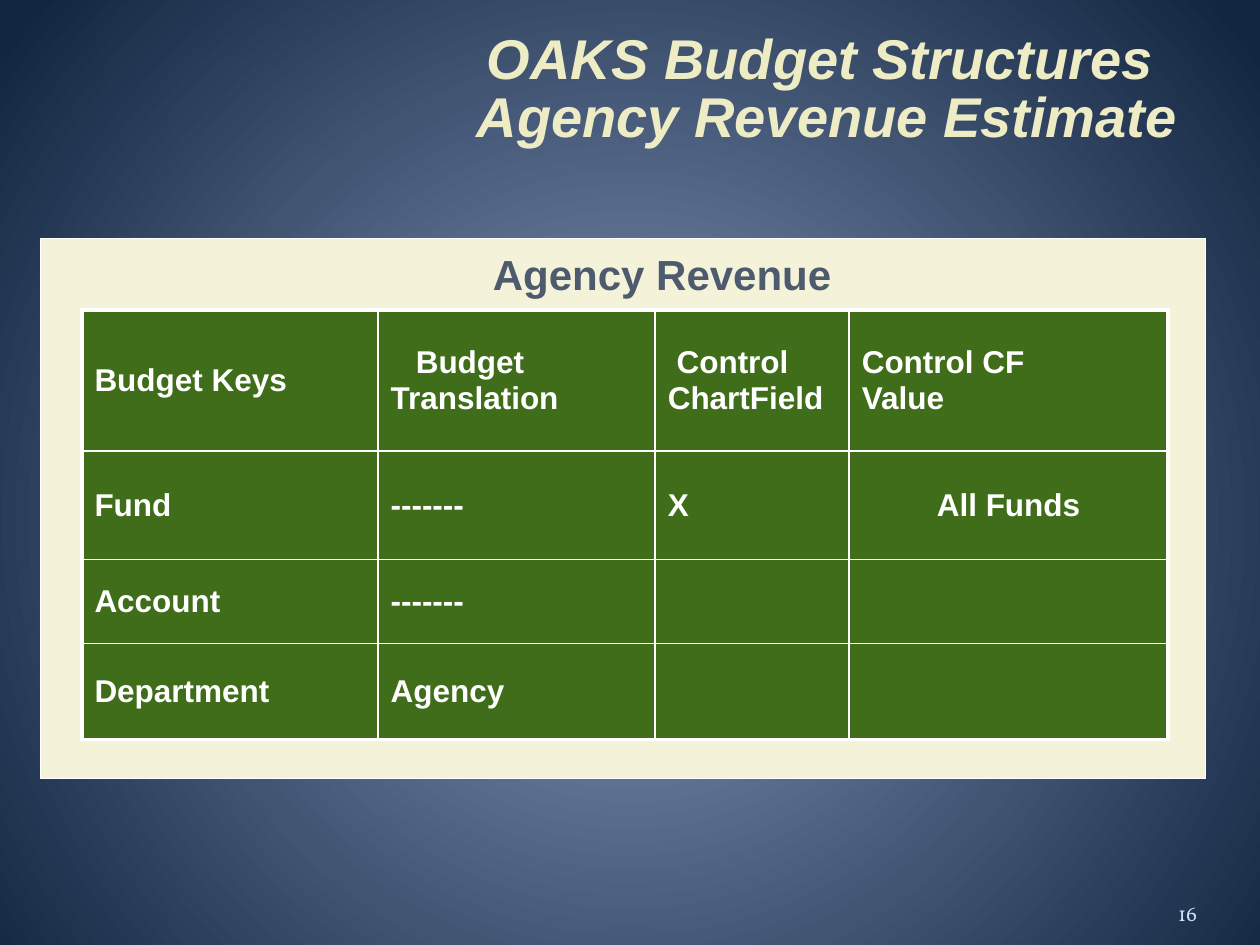
from lxml import etree
from pptx import Presentation
from pptx.dml.color import RGBColor
from pptx.enum import shapes, text
from pptx.oxml import parse_xml
from pptx.oxml.ns import nsdecls, qn
from pptx.util import Inches, Pt

WHITE, GREEN, CREAM = "FFFFFF", "3F6D19", "F4F3D9"
SLATE, TITLE, PALE_BLUE = "4E5B6F", "EEECC4", "CCE1F4"
LEFT, CENTER, RIGHT = (text.PP_ALIGN.LEFT, text.PP_ALIGN.CENTER,
                       text.PP_ALIGN.RIGHT)
MIDDLE, BOTTOM = text.MSO_ANCHOR.MIDDLE, text.MSO_ANCHOR.BOTTOM

BACKGROUND_STOPS = [(0, "51DAFF"), (7, "7B85B3"), (14, "7386A7"), (100, "122541")]
COLUMN_WIDTHS = [2.35, 2.2, 1.54, 2.53]
ROW_HEIGHTS = [1.12, 0.86, 0.67, 0.76]
ROWS = [
    ["Budget Keys", "Budget Translation", "Control ChartField", "Control CF\vValue"],
    ["Fund", "-------", "X", "All Funds"],
    ["Account", "-------", "", ""],
    ["Department", "Agency", "", ""],
]
FIRST_LINE_INDENTS = {"Budget Translation": 0.2, "Control ChartField": 0.07}


def color(hex_value):
    return RGBColor.from_string(hex_value)


def write(frame, words, size=18, font="Arial", fill=WHITE, bold=True,
          italic=False, align=LEFT, margin=0, indent=0):
    paragraph = frame.paragraphs[0]
    paragraph.text = words
    paragraph.alignment = align
    if margin or indent:
        properties = paragraph._p.get_or_add_pPr()
        properties.set("marL", str(Inches(margin)))
        properties.set("indent", str(Inches(indent)))
    for run in paragraph.runs:
        run.font.name = font
        run.font.size = Pt(size)
        run.font.bold = bold
        run.font.italic = italic
        run.font.color.rgb = color(fill)


def add_text(slide, box, words, anchor=BOTTOM, inset=True, **style):
    frame = slide.shapes.add_textbox(*map(Inches, box)).text_frame
    frame.word_wrap = True
    frame.vertical_anchor = anchor
    if not inset:
        frame.margin_left = frame.margin_right = 0
        frame.margin_top = frame.margin_bottom = 0
    write(frame, words, **style)


def set_background(slide):
    """Fill the slide with a circular gradient."""
    slide.background.fill.solid()
    solid = slide.background._cSld.find(".//" + qn("a:solidFill"))
    stops = "".join(
        f'<a:gs pos="{position * 1000}"><a:srgbClr val="{value}"/></a:gs>'
        for position, value in BACKGROUND_STOPS)
    gradient = parse_xml(
        f'<a:gradFill {nsdecls("a")} rotWithShape="1"><a:gsLst>{stops}</a:gsLst>'
        '<a:path path="circle"><a:fillToRect l="10000" t="110000" r="10000" '
        'b="100000"/></a:path></a:gradFill>')
    solid.getparent().replace(solid, gradient)


def add_panel(slide, box):
    panel = slide.shapes.add_shape(shapes.MSO_SHAPE.RECTANGLE, *map(Inches, box))
    panel.shadow.inherit = False
    panel.fill.solid()
    panel.fill.fore_color.rgb = color(CREAM)
    panel.line.color.rgb = color(WHITE)
    panel.line.width = Pt(0.75)


def set_borders(cell, outer_sides):
    """Draw white borders, thicker on the table's outer sides."""
    properties = cell._tc.get_or_add_tcPr()
    for side in "LRTB":
        width = Pt(2.25 if side in outer_sides else 1)
        line = etree.SubElement(properties, qn(f"a:ln{side}"), w=str(width))
        fill = etree.SubElement(line, qn("a:solidFill"))
        etree.SubElement(fill, qn("a:srgbClr"), val=WHITE)


def add_revenue_table(slide, left, top):
    last_row, last_column = len(ROWS) - 1, len(COLUMN_WIDTHS) - 1
    table = slide.shapes.add_table(
        len(ROWS), len(COLUMN_WIDTHS), Inches(left), Inches(top),
        Inches(sum(COLUMN_WIDTHS)), Inches(sum(ROW_HEIGHTS))).table
    table.first_row = table.horz_banding = False
    for column, width in zip(table.columns, COLUMN_WIDTHS):
        column.width = Inches(width)
    for row, height in zip(table.rows, ROW_HEIGHTS):
        row.height = Inches(height)
    for r, values in enumerate(ROWS):
        for c, words in enumerate(values):
            cell = table.cell(r, c)
            cell.vertical_anchor = MIDDLE
            edges = {"L": c == 0, "R": c == last_column,
                     "T": r == 0, "B": r == last_row}
            set_borders(cell, [side for side, outer in edges.items() if outer])
            cell.fill.solid()
            cell.fill.fore_color.rgb = color(GREEN)
            if words:
                write(cell.text_frame, words,
                      align=CENTER if words == "All Funds" else LEFT,
                      indent=FIRST_LINE_INDENTS.get(words, 0))


def main():
    presentation = Presentation()
    presentation.slide_width, presentation.slide_height = Inches(10), Inches(7.5)
    slide = presentation.slides.add_slide(presentation.slide_layouts[6])
    set_background(slide)
    add_text(slide, (8.67, 6.95, 0.83, 0.4), "16", inset=False, size=12,
             font="Vollkorn", fill=PALE_BLUE, bold=False, align=RIGHT)
    add_panel(slide, (0.32, 1.89, 9.25, 4.29))
    add_text(slide, (0.45, 1.92, 9.11, 0.5), "Agency Revenue", anchor=MIDDLE,
             size=24, fill=SLATE, align=CENTER, margin=0.5)
    add_revenue_table(slide, 0.65, 2.46)
    title_style = dict(size=32, fill=TITLE, italic=True, align=CENTER)
    add_text(slide, (3.12, 0.09, 6.78, 0.68), "OAKS Budget Structures", **title_style)
    add_text(slide, (3.18, 0.65, 6.77, 0.58), "Agency Revenue Estimate", **title_style)
    presentation.save("out.pptx")


if __name__ == "__main__":
    main()
